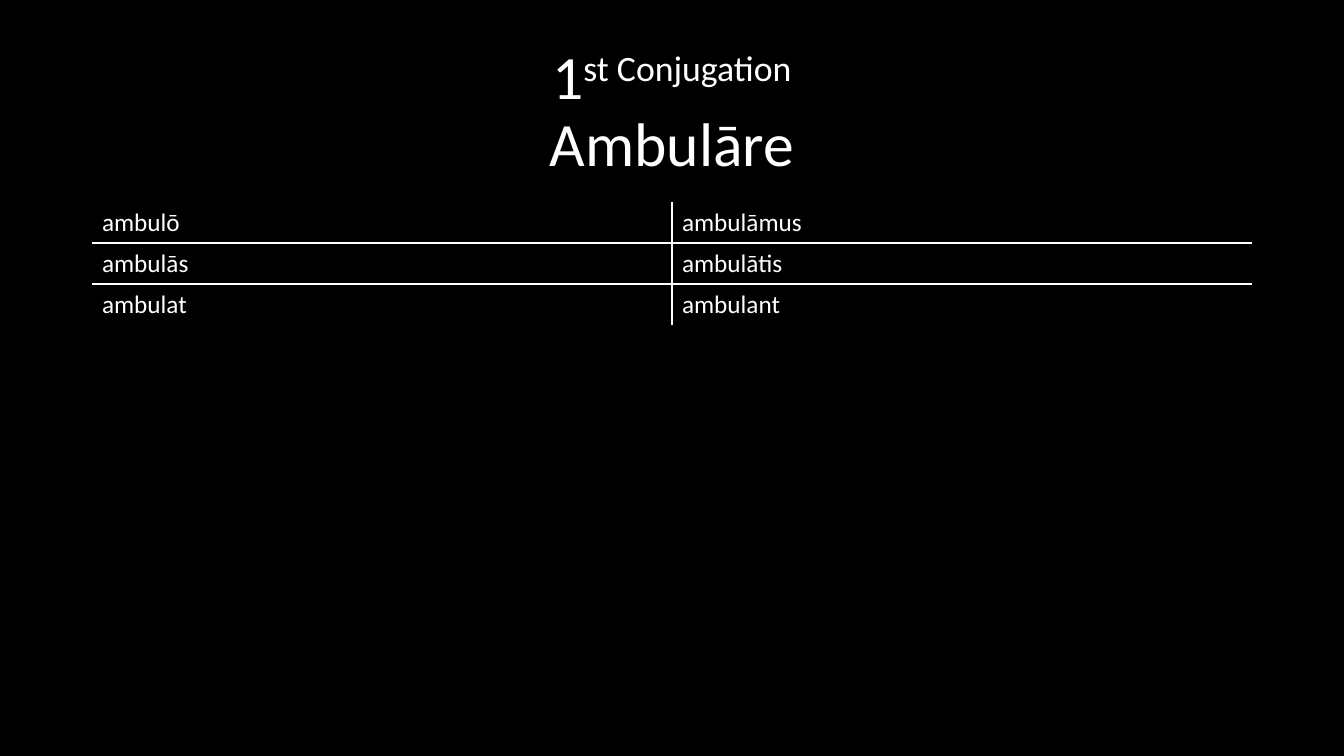
"""Build a slide with the conjugation table of a Latin verb."""
import lxml.etree
import pptx
import pptx.dml.color
import pptx.enum.text
import pptx.oxml.ns
import pptx.util

PIXELS_PER_INCH = 100.8
BLACK = pptx.dml.color.RGBColor(0x00, 0x00, 0x00)
WHITE = pptx.dml.color.RGBColor(0xFF, 0xFF, 0xFF)
FONT = "Calibri"
LEFT, WIDTH = 92, 1160
ROW_HEIGHT = 41
FORMS = [
    ("ambulō", "ambulāmus"),
    ("ambulās", "ambulātis"),
    ("ambulat", "ambulant"),
]


def px(length):
    """Turn pixels into EMU."""
    return pptx.util.Inches(length / PIXELS_PER_INCH)


def add_run(paragraph, text, size, baseline=None):
    """Add a white run, raised by a baseline in thousandths of a percent."""
    run = paragraph.add_run()
    run.text = text
    run.font.name = FONT
    run.font.size = pptx.util.Pt(size)
    run.font.color.rgb = WHITE
    if baseline:
        run.font._element.set("baseline", str(baseline))


def add_title(slide):
    """Add the centred heading in two lines."""
    box = slide.shapes.add_textbox(px(LEFT), px(40), px(WIDTH), px(146))
    frame = box.text_frame
    frame.word_wrap = True
    frame.vertical_anchor = pptx.enum.text.MSO_ANCHOR.MIDDLE
    paragraph = frame.paragraphs[0]
    paragraph.alignment = pptx.enum.text.PP_ALIGN.CENTER
    paragraph.line_spacing = 0.9
    add_run(paragraph, "1", 44)
    add_run(paragraph, "st Conjugation", 44, 30000)
    paragraph.add_line_break()
    add_run(paragraph, "Ambulāre", 44)


def set_border(cell, side, visible):
    """Draw or clear one side (L, R, T or B) of a cell."""
    properties = cell._tc.get_or_add_tcPr()
    qualified = pptx.oxml.ns.qn
    line = lxml.etree.SubElement(properties, qualified(f"a:ln{side}"), w=str(pptx.util.Pt(1)))
    if visible:
        fill = lxml.etree.SubElement(line, qualified("a:solidFill"))
        lxml.etree.SubElement(fill, qualified("a:srgbClr"), val=str(WHITE))
    else:
        lxml.etree.SubElement(line, qualified("a:noFill"))


def add_forms_table(slide):
    """Add the verb forms, ruled only between the cells."""
    row_count, column_count = len(FORMS), len(FORMS[0])
    frame = slide.shapes.add_table(
        row_count, column_count, px(LEFT), px(202), px(WIDTH), px(ROW_HEIGHT * row_count)
    )
    table = frame.table
    table.first_row = False
    table.horz_banding = False
    for row_index, forms in enumerate(FORMS):
        table.rows[row_index].height = px(ROW_HEIGHT)
        for column_index, form in enumerate(forms):
            cell = table.cell(row_index, column_index)
            add_run(cell.text_frame.paragraphs[0], form, 18)
            set_border(cell, "L", column_index > 0)
            set_border(cell, "R", column_index < column_count - 1)
            set_border(cell, "T", row_index > 0)
            set_border(cell, "B", row_index < row_count - 1)
            cell.fill.background()


def main():
    """Build and save the slide."""
    presentation = pptx.Presentation()
    presentation.slide_width = px(1344)
    presentation.slide_height = px(756)
    slide = presentation.slides.add_slide(presentation.slide_layouts[6])
    slide.background.fill.solid()
    slide.background.fill.fore_color.rgb = BLACK
    add_title(slide)
    add_forms_table(slide)
    presentation.save("out.pptx")


if __name__ == "__main__":
    main()
